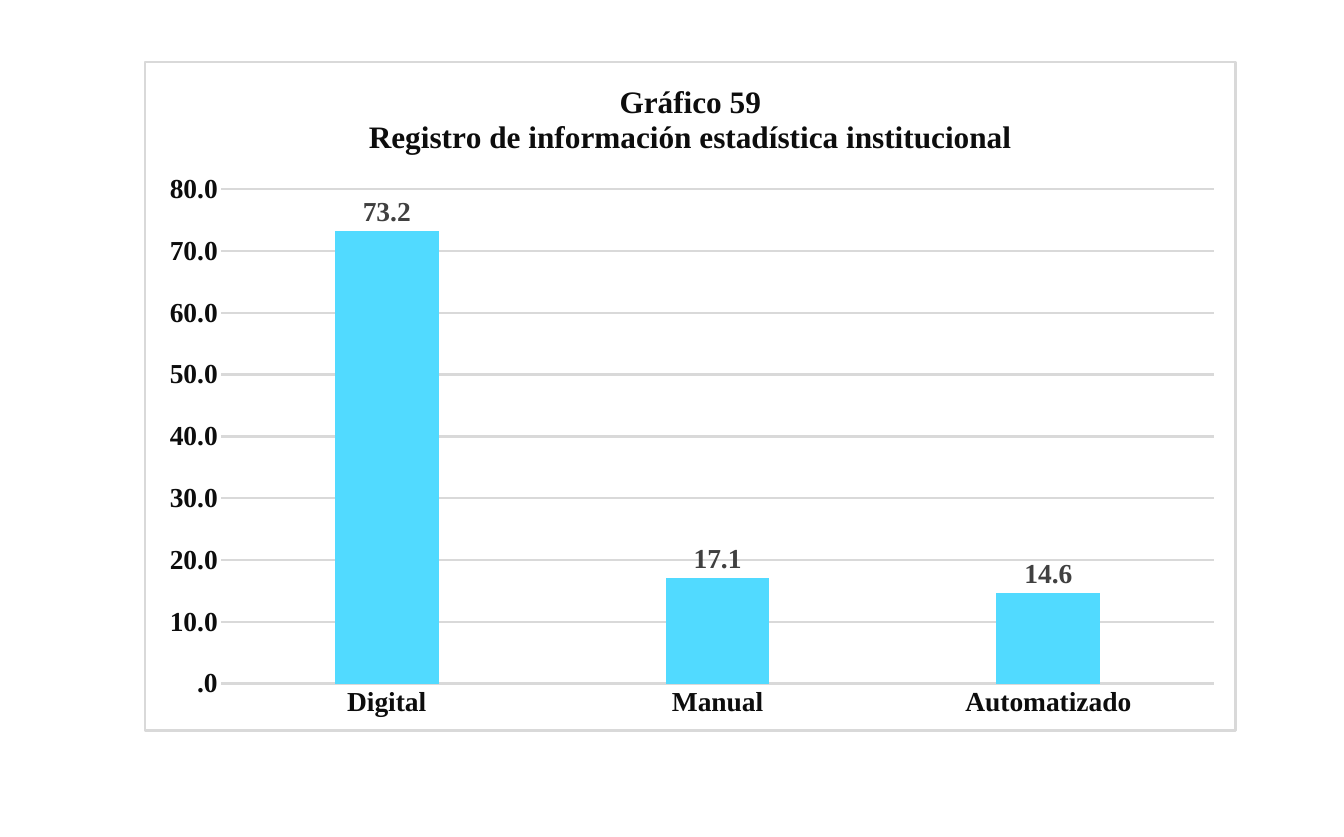
from dataclasses import dataclass

from lxml.etree import SubElement
from pptx import Presentation
from pptx.chart.chart import Chart
from pptx.chart.data import CategoryChartData
from pptx.dml.color import RGBColor
from pptx.dml.line import LineFormat
from pptx.enum.chart import XL_CHART_TYPE, XL_LABEL_POSITION, XL_TICK_MARK
from pptx.oxml import parse_xml
from pptx.oxml.ns import nsdecls, qn
from pptx.text.text import Font
from pptx.util import Inches, Pt


@dataclass(frozen=True)
class Theme:
    face: str = "Times New Roman"
    ink: str = "0D0D0D"
    label: str = "404040"
    bar: str = "51DAFF"
    rule: str = "D9D9D9"
    rule_pt: float = 1.75
    title_pt: float = 24
    text_pt: float = 21.1


@dataclass(frozen=True)
class Box:
    """A box in shares of its parent's size."""
    x: float
    y: float
    w: float
    h: float


@dataclass(frozen=True)
class Bar:
    name: str
    value: float


THEME = Theme()
WIDTH, HEIGHT = Inches(14.29), Inches(8.9)
FRAME = Box(1.53 / 14.29, 0.65 / 8.9, 11.62 / 14.29, 7.13 / 8.9)
PLOT = Box(0.07, 0.19, 0.91, 0.74)
FORMAT = "####.0"
TITLE = ("Gráfico 59", "Registro de información estadística institucional")
BARS = (Bar("Digital", 73.2), Bar("Manual", 17.1), Bar("Automatizado", 14.6))


def style(font: Font, size: float, color: str) -> None:
    font.name, font.size, font.bold = THEME.face, Pt(size), True
    font.color.rgb = RGBColor.from_string(color)


def rule(line: LineFormat) -> None:
    line.width = Pt(THEME.rule_pt)
    line.color.rgb = RGBColor.from_string(THEME.rule)


def write_title(chart: Chart) -> None:
    chart.has_title = True
    title = chart.chart_title
    title.include_in_layout = False
    frame = title.text_frame
    for i, text in enumerate(TITLE):
        para = frame.add_paragraph() if i else frame.paragraphs[0]
        para.text = text
        style(para.font, THEME.title_pt, THEME.ink)


def style_axes(chart: Chart) -> None:
    for axis in (chart.category_axis, chart.value_axis):
        axis.major_tick_mark = axis.minor_tick_mark = XL_TICK_MARK.NONE
        style(axis.tick_labels.font, THEME.text_pt, THEME.ink)
    rule(chart.category_axis.format.line)
    axis = chart.value_axis
    axis.minimum_scale, axis.maximum_scale, axis.major_unit = 0, 80, 10
    axis.format.line.fill.background()
    axis.has_major_gridlines = True
    rule(axis.major_gridlines.format.line)
    axis.tick_labels.number_format = FORMAT
    axis.tick_labels.number_format_is_linked = False


def style_bars(chart: Chart) -> None:
    plot = chart.plots[0]
    plot.vary_by_categories = False
    plot.gap_width, plot.overlap = 219, -27
    series = plot.series[0]
    series.format.fill.solid()
    series.format.fill.fore_color.rgb = RGBColor.from_string(THEME.bar)
    series.format.line.fill.background()
    labels = series.data_labels
    labels.show_value = True
    labels.position = XL_LABEL_POSITION.OUTSIDE_END
    labels.number_format, labels.number_format_is_linked = FORMAT, False
    style(labels.font, THEME.text_pt, THEME.label)


def place_plot(chart: Chart, box: Box) -> None:
    """Fix the inner plot area inside the chart."""
    area = chart.plots[0]._element.getparent()
    for old in area.findall(qn("c:layout")):
        area.remove(old)
    layout = parse_xml(f"<c:layout {nsdecls('c')}><c:manualLayout/></c:layout>")
    parts = {"layoutTarget": "inner", "xMode": "edge", "yMode": "edge",
             "x": box.x, "y": box.y, "w": box.w, "h": box.h}
    for tag, value in parts.items():
        SubElement(layout[0], qn(f"c:{tag}")).set("val", str(value))
    area.insert(0, layout)


def add_border(chart: Chart) -> None:
    border = parse_xml(
        f"<c:spPr {nsdecls('c', 'a')}><a:noFill/>"
        f'<a:ln w="{Pt(THEME.rule_pt)}"><a:solidFill>'
        f'<a:srgbClr val="{THEME.rule}"/></a:solidFill></a:ln></c:spPr>')
    chart._chartSpace.find(qn("c:chart")).addnext(border)


def main() -> None:
    deck = Presentation()
    deck.slide_width, deck.slide_height = WIDTH, HEIGHT
    slide = deck.slides.add_slide(deck.slide_layouts[6])
    data = CategoryChartData(number_format=FORMAT)
    data.categories = [bar.name for bar in BARS]
    data.add_series("Series 1", [bar.value for bar in BARS])
    chart = slide.shapes.add_chart(
        XL_CHART_TYPE.COLUMN_CLUSTERED,
        round(FRAME.x * WIDTH), round(FRAME.y * HEIGHT),
        round(FRAME.w * WIDTH), round(FRAME.h * HEIGHT), data).chart
    chart.has_legend = False
    chart.font.name, chart.font.size = THEME.face, Pt(10)
    write_title(chart)
    style_axes(chart)
    style_bars(chart)
    place_plot(chart, PLOT)
    add_border(chart)
    deck.save("out.pptx")


if __name__ == "__main__":
    main()
